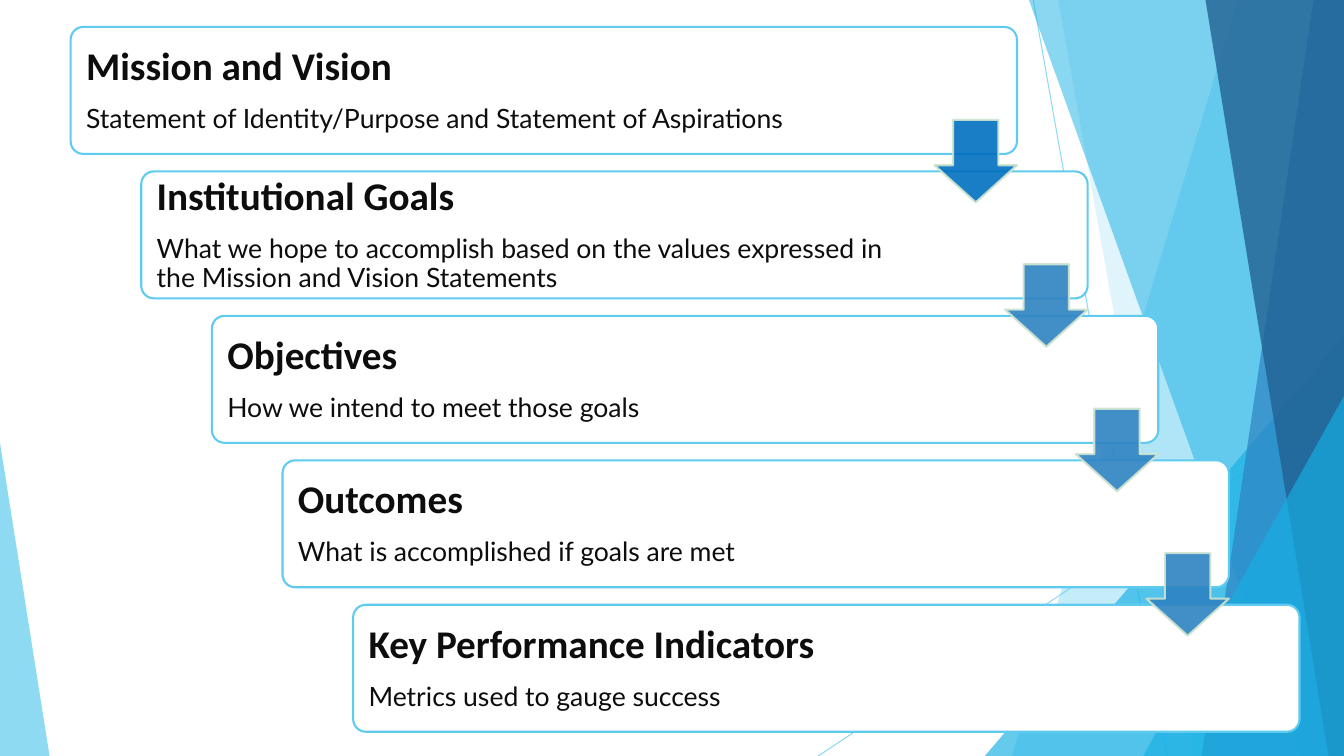
from lxml import etree
from pptx import Presentation
from pptx import util as u
from pptx.dml.color import RGBColor
from pptx.enum import shapes, text
from pptx.oxml import ns


class Theme:
    """Colours, fonts and type sizes."""
    sky, cyan, blue, navy = "5FCBEF", "17B0E4", "2E83C3", "226292"
    white, ink, deep, rim = "FFFFFF", "0D0D0D", "0070C0", "CFE4D0"
    head, body = ("Calibri", 28), ("Lato", 19)


class Deck:
    """Draws styled elements on the current slide."""

    def __init__(self, theme, wide, high):
        """Open a deck with one blank slide."""
        self.theme, self.wide, self.high = theme, wide, high
        self.prs = Presentation()
        self.prs.slide_width, self.prs.slide_height = u.Cm(wide), u.Cm(high)
        self.slide = self.prs.slides.add_slide(self.prs.slide_layouts[6])
        self.items = self.slide.shapes

    def fade(self, item, alpha):
        """Set the opacity of every colour of an element, in percent."""
        for tint in item._element.spPr.iter(ns.qn("a:srgbClr")):
            etree.SubElement(tint, ns.qn("a:alpha")).set("val", str(alpha * 1000))

    def paint(self, item, fill, line=None, alpha=100):
        """Give a shape its fill, outline and opacity."""
        item.shadow.inherit = False
        item.fill.solid()
        item.fill.fore_color.rgb = RGBColor.from_string(fill)
        if line:
            item.line.color.rgb = RGBColor.from_string(line)
            item.line.width = u.Pt(1.5)
        else:
            item.line.fill.background()
        if alpha < 100:
            self.fade(item, alpha)

    def shape(self, kind, box, adj, fill, **style):
        """Add a preset shape."""
        item = self.items.add_shape(kind, *map(u.Cm, box))
        for i, val in enumerate(adj):
            item.adjustments[i] = val
        self.paint(item, fill, **style)

    def facet(self, top, foot, fill, alpha):
        """Add a slanted band that reaches the right edge."""
        spots = [(self.wide, 0), (self.wide, self.high), (foot, self.high)]
        edge = self.items.build_freeform(u.Cm(top), 0)
        edge.add_line_segments([(u.Cm(x), u.Cm(y)) for x, y in spots])
        self.paint(edge.convert_to_shape(), fill, alpha=alpha)

    def line(self, ends, color, alpha):
        """Add a thin straight line."""
        item = self.items.add_connector(
            shapes.MSO_CONNECTOR.STRAIGHT, *map(u.Cm, ends))
        item.line.color.rgb = RGBColor.from_string(color)
        item.line.width = u.Pt(0.75)
        self.fade(item, alpha)
        etree.SubElement(item._element.spPr, ns.qn("a:effectLst"))

    def words(self, para, string, font, color, bold=False, after=0):
        """Put formatted text in a paragraph."""
        para.line_spacing, para.space_after = 0.9, u.Pt(after)
        run = para.add_run()
        run.text = string
        run.font.name, run.font.size = font[0], u.Pt(font[1])
        run.font.bold = bold
        run.font.color.rgb = RGBColor.from_string(color)

    def label(self, box, title, note):
        """Add a heading with a note below it."""
        frame = self.items.add_textbox(*map(u.Cm, box)).text_frame
        frame.word_wrap = True
        frame.vertical_anchor = text.MSO_ANCHOR.MIDDLE
        frame.margin_left = frame.margin_right = u.Cm(0.3)
        frame.margin_top = frame.margin_bottom = u.Cm(0.3)
        look = self.theme
        self.words(frame.paragraphs[0], title, look.head, look.ink,
                   bold=True, after=12)
        self.words(frame.add_paragraph(), note, look.body, look.ink)


STEPS = [
    ("Mission and Vision",
     "Statement of Identity/Purpose and Statement of Aspirations"),
    ("Institutional Goals",
     "What we hope to accomplish based on the values expressed in "
     "the Mission and Vision Statements"),
    ("Objectives", "How we intend to meet those goals"),
    ("Outcomes", "What is accomplished if goals are met"),
    ("Key Performance Indicators", "Metrics used to gauge success"),
]
DX, DY = 1.78, 3.64


def backdrop(deck):
    """Draw the faceted edges of the slide."""
    look, kind = deck.theme, shapes.MSO_SHAPE.ISOSCELES_TRIANGLE
    deck.line((26.04, 0, 29.41, 19.05), look.sky, 70)
    deck.line((33.87, 10.23, 20.62, 19.05), look.sky, 70)
    deck.facet(31.19, 25.5, look.sky, 36)
    deck.facet(26.67, 30.05, look.sky, 20)
    deck.shape(kind, (24.82, 8.46, 9.05, 10.59), [1], look.cyan, alpha=66)
    deck.facet(25.93, 32.79, look.cyan, 50)
    deck.facet(33.1, 30.28, look.blue, 70)
    deck.facet(30.38, 33.48, look.navy, 80)
    deck.shape(kind, (28.81, 9.98, 5.06, 9.07), [1], look.cyan, alpha=66)
    deck.shape(kind, (0, 11.15, 1.25, 7.9), [0], look.sky, alpha=70)


def cascade(deck):
    """Draw the stepped boxes and the arrows between them."""
    look, kinds = deck.theme, shapes.MSO_SHAPE
    for i, (title, note) in enumerate(STEPS):
        x, y = DX * (i + 1), 0.68 + DY * i
        deck.shape(kinds.ROUNDED_RECTANGLE, (x, y, 23.85, 3.2), [0.1],
                   look.white, line=look.sky)
        wide = 19.81 if i else 20.04
        deck.label((x + 0.09, y + 0.1, wide, 3), title, note)
    for i in range(len(STEPS) - 1):
        deck.shape(kinds.DOWN_ARROW, (23.55 + DX * i, 3.02 + DY * i, 2.08, 2.08),
                   [0.55, 0.45], look.blue if i else look.deep,
                   line=look.rim, alpha=90)


def main():
    """Build and save the slide."""
    deck = Deck(Theme(), 33.87, 19.05)
    backdrop(deck)
    cascade(deck)
    deck.prs.save("out.pptx")


if __name__ == "__main__":
    main()
